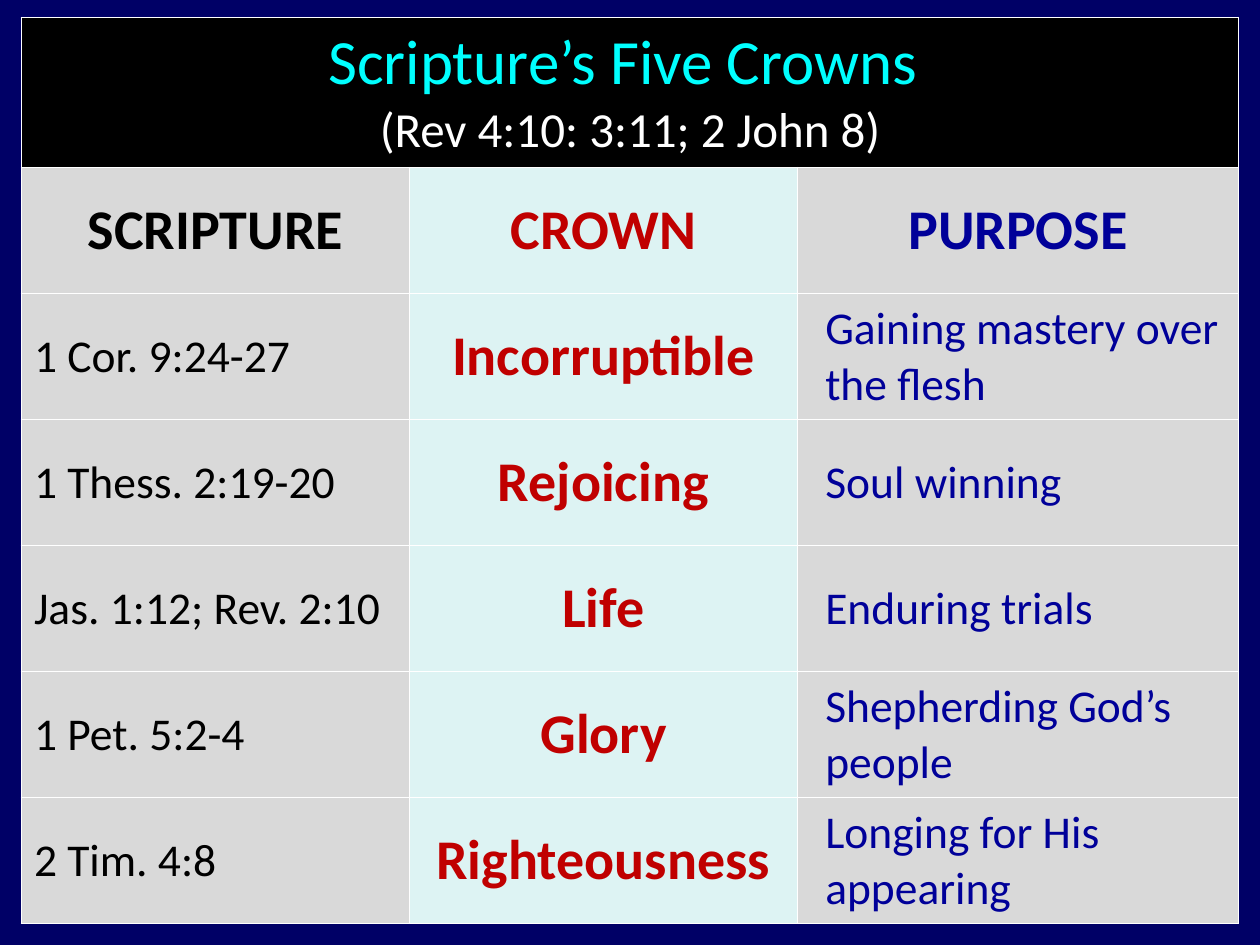
from lxml.etree import SubElement
from pptx import Presentation
from pptx.dml.color import RGBColor
from pptx.enum.text import MSO_ANCHOR, PP_ALIGN
from pptx.oxml.ns import qn
from pptx.util import Inches, Pt

COLORS = {
    "navy": "000066", "black": "000000", "white": "FFFFFF", "cyan": "00FFFF",
    "gray": "D9D9D9", "mint": "DDF3F3", "red": "C00000", "blue": "000099",
}
HEADING = {"size": Pt(32), "bold": True}
DETAIL = {"size": Pt(26), "bold": False}
COLUMNS = [
    {"width": 3.08, "fill": "gray", "ink": "black", "body": DETAIL, "align": PP_ALIGN.LEFT},
    {"width": 3.08, "fill": "mint", "ink": "red", "body": HEADING, "align": PP_ALIGN.CENTER},
    {"width": 3.5, "fill": "gray", "ink": "blue", "body": DETAIL, "align": PP_ALIGN.LEFT,
     "indent": 0.12},
]
ROW_HEIGHTS = [1.19] + [1] * 6
BANNER = [
    ("Scripture’s Five Crowns ", "cyan", {"size": Pt(36)}),
    ("(Rev 4:10: 3:11; 2 John 8)", "white", {"size": Pt(28)}),
]
HEADERS = ["SCRIPTURE", "CROWN", "PURPOSE"]
CROWNS = [
    ["1 Cor. 9:24-27", "Incorruptible", "Gaining mastery over the flesh"],
    ["1 Thess. 2:19-20", "Rejoicing", "Soul winning"],
    ["Jas. 1:12; Rev. 2:10", "Life", "Enduring trials"],
    ["1 Pet. 5:2-4", "Glory", "Shepherding God’s people"],
    ["2 Tim. 4:8", "Righteousness", "Longing for His appearing"],
]


class CrownSlide:
    """Hold the style and the slide, and draw the parts of the crown table."""

    def __init__(self, deck, font="Calibri"):
        self.font = font
        self.slide = deck.slides.add_slide(deck.slide_layouts[6])
        background = self.slide.background.fill
        background.solid()
        background.fore_color.rgb = self.color("navy")

    def color(self, name):
        return RGBColor.from_string(COLORS[name])

    def table(self, left, top, widths, heights):
        size = [Inches(sum(lengths)) for lengths in (widths, heights)]
        frame = self.slide.shapes.add_table(
            len(heights), len(widths), Inches(left), Inches(top), *size)
        table = frame.table
        for column, width in zip(table.columns, widths):
            column.width = Inches(width)
        for row, height in zip(table.rows, heights):
            row.height = Inches(height)
        return table

    def cell(self, cell, fill):
        cell.vertical_anchor = MSO_ANCHOR.MIDDLE
        properties = cell._tc.get_or_add_tcPr()
        for side in ("a:lnL", "a:lnR", "a:lnT", "a:lnB"):
            border = SubElement(properties, qn(side), w=str(Pt(1)))
            paint = SubElement(border, qn("a:solidFill"))
            SubElement(paint, qn("a:srgbClr"), val=COLORS["white"])
        cell.fill.solid()
        cell.fill.fore_color.rgb = self.color(fill)

    def text(self, cell, lines, align, indent=0):
        paragraph = cell.text_frame.paragraphs[0]
        paragraph.alignment = align
        if indent:
            paragraph._p.get_or_add_pPr().set("marL", str(Inches(indent)))
        for position, (words, ink, style) in enumerate(lines):
            if position:
                paragraph.add_line_break()
            run = paragraph.add_run()
            run.text = words
            run.font.color.rgb = self.color(ink)
            for name, value in {"name": self.font, "bold": False, **style}.items():
                setattr(run.font, name, value)


def main():
    deck = Presentation()
    deck.slide_width, deck.slide_height = Inches(10), Inches(7.5)
    page = CrownSlide(deck)
    crowns = page.table(0.17, 0.14, [column["width"] for column in COLUMNS], ROW_HEIGHTS)

    for cell in crowns.rows[0].cells:
        page.cell(cell, "black")
    crowns.cell(0, 0).merge(crowns.cell(0, len(COLUMNS) - 1))
    page.text(crowns.cell(0, 0), BANNER, PP_ALIGN.CENTER)

    for row, entries in enumerate([HEADERS] + CROWNS, start=1):
        for index, (words, column) in enumerate(zip(entries, COLUMNS)):
            cell = crowns.cell(row, index)
            page.cell(cell, column["fill"])
            if entries is HEADERS:
                page.text(cell, [(words, column["ink"], HEADING)], PP_ALIGN.CENTER)
            else:
                page.text(cell, [(words, column["ink"], column["body"])],
                          column["align"], column.get("indent", 0))

    deck.save("out.pptx")


if __name__ == "__main__":
    main()
